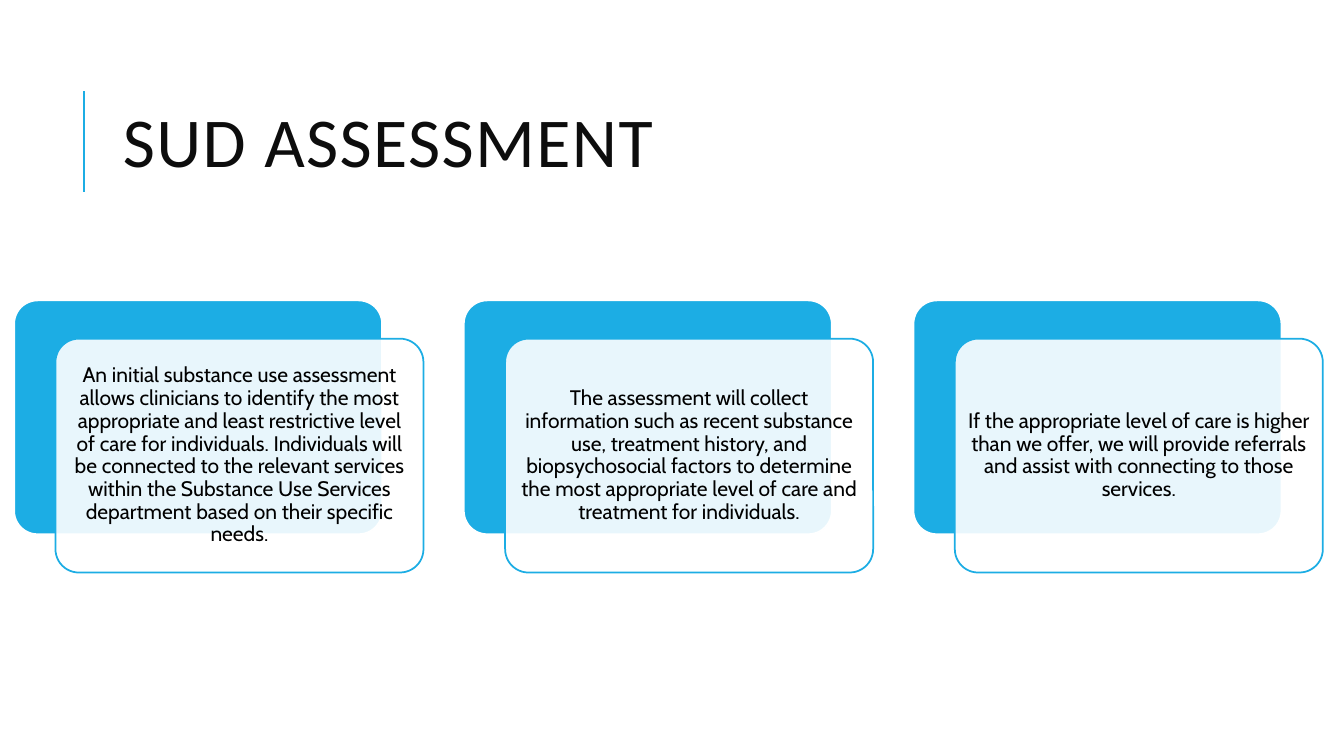
from lxml.etree import SubElement
from pptx import Presentation
from pptx.dml.color import RGBColor
from pptx.enum.shapes import MSO_CONNECTOR, MSO_SHAPE
from pptx.enum.text import MSO_ANCHOR, PP_ALIGN
from pptx.oxml.ns import qn
from pptx.util import Inches, Pt

BLUE = RGBColor(0x1C, 0xAD, 0xE4)
WHITE = RGBColor(0xFF, 0xFF, 0xFF)
BLACK = RGBColor(0x00, 0x00, 0x00)
NEAR_BLACK = RGBColor(0x0D, 0x0D, 0x0D)

CARD_WIDTH, CARD_HEIGHT = 3.65, 2.32
CARD_LEFT, CARD_TOP, CARD_STEP = 0.14, 2.98, 4.46
FRONT_SHIFT_X, FRONT_SHIFT_Y = 0.41, 0.38

STATEMENTS = [
    "An initial substance use assessment allows clinicians to identify the most "
    "appropriate and least restrictive level of care for individuals. Individuals "
    "will be connected to the relevant services within the Substance Use Services "
    "department based on their specific needs.",
    "The assessment will collect information such as recent substance use, "
    "treatment history, and biopsychosocial factors to determine the most "
    "appropriate level of care and treatment for individuals.",
    "If the appropriate level of care is higher than we offer, we will provide "
    "referrals and assist with connecting to those services.",
]


class SlideBuilder:
    title_font = "Calibri"
    body_font = "Cabin"

    def __init__(self, slide):
        self.slide = slide

    def accent_line(self, x, top, bottom):
        accent = self.slide.shapes.add_connector(
            MSO_CONNECTOR.STRAIGHT, Inches(x), Inches(bottom), Inches(x), Inches(top))
        accent.line.color.rgb = BLUE
        accent.line.width = Pt(1.5)
        SubElement(accent._element.spPr, qn("a:effectLst"))

    def title(self, text, left, top, width, height):
        heading = self.slide.shapes.add_textbox(
            Inches(left), Inches(top), Inches(width), Inches(height))
        self.set_text(heading.text_frame, text, self.title_font, 50, NEAR_BLACK, 0.8)
        run = heading.text_frame.paragraphs[0].runs[0]
        run._r.get_or_add_rPr().set("spc", "100")

    def panel(self, left, top, fill, outline):
        panel = self.slide.shapes.add_shape(
            MSO_SHAPE.ROUNDED_RECTANGLE, Inches(left), Inches(top),
            Inches(CARD_WIDTH), Inches(CARD_HEIGHT))
        panel.adjustments[0] = 0.1
        panel.shadow.inherit = False
        panel.fill.solid()
        panel.fill.fore_color.rgb = fill
        panel.line.color.rgb = outline
        panel.line.width = Pt(1.25)
        return panel

    def card(self, text, left, top):
        self.panel(left, top, BLUE, WHITE)
        front = self.panel(left + FRONT_SHIFT_X, top + FRONT_SHIFT_Y, WHITE, BLUE)
        white = front._element.spPr.find(qn("a:solidFill")).find(qn("a:srgbClr"))
        SubElement(white, qn("a:alpha"), val="90000")
        frame = front.text_frame
        frame.margin_left = frame.margin_right = Inches(0.06)
        frame.margin_top = frame.margin_bottom = Inches(0.06)
        self.set_text(frame, text, self.body_font, 15, BLACK, 0.9, PP_ALIGN.CENTER)

    def set_text(self, frame, text, font, size, color, spacing, align=PP_ALIGN.LEFT):
        frame.word_wrap = True
        frame.vertical_anchor = MSO_ANCHOR.MIDDLE
        paragraph = frame.paragraphs[0]
        paragraph.text = text
        paragraph.alignment = align
        paragraph.line_spacing = spacing
        paragraph.font.name = font
        paragraph.font.size = Pt(size)
        paragraph.font.color.rgb = color


def main():
    presentation = Presentation()
    presentation.slide_width = Inches(13.33)
    presentation.slide_height = Inches(7.5)
    builder = SlideBuilder(presentation.slides.add_slide(presentation.slide_layouts[6]))
    builder.accent_line(0.83, 0.9, 1.9)
    builder.title("SUD ASSESSMENT", 1.12, 0.64, 10.63, 1.64)
    for position, statement in enumerate(STATEMENTS):
        builder.card(statement, CARD_LEFT + position * CARD_STEP, CARD_TOP)
    presentation.save("out.pptx")


if __name__ == "__main__":
    main()
